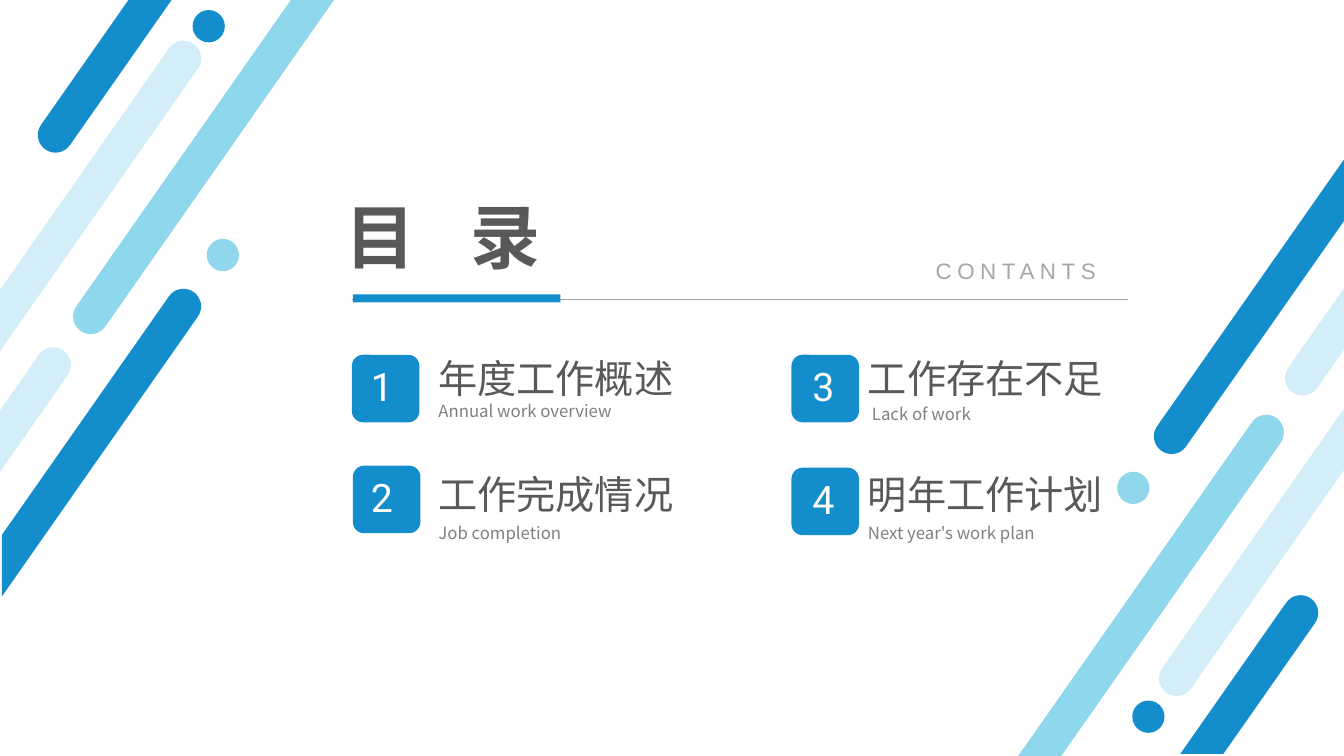
from math import cos, pi, radians, sin

from lxml.etree import SubElement
from pptx import Presentation
from pptx.dml.color import RGBColor
from pptx.enum.shapes import MSO_CONNECTOR, MSO_SHAPE
from pptx.enum.text import MSO_AUTO_SIZE, PP_ALIGN
from pptx.oxml.ns import qn
from pptx.util import Pt

PX = 9144
BLUE, SKY, SKY_CAP, PALE = "138DCC", "90D7EE", "8FD7ED", "D3EEF9"
DARK, MID, LIGHT, WHITE = "595959", "808080", "A6A6A6", "FFFFFF"
CJK = "Noto Sans CJK SC"
RADIUS, TILT, ARC_STEPS = 17.5, radians(35), 16

# Stripe: cap centre x and y, the axis and position of its straight cut, colour
STRIPES = [
    (182, 304, "x", 2, BLUE),
    (53, 362, "x", -4, PALE),
    (90, 314, "y", -3, SKY_CAP),
    (182, 58, "x", -3, PALE),
    (55, 134, "y", -4, BLUE),
    (1162, 433, "x", 1333, BLUE),
    (1292, 375, "x", 1338, PALE),
    (1256, 429, "y", 752, SKY_CAP),
    (1167, 673, "x", 1338, PALE),
    (1290, 608, "y", 748, BLUE),
]
DOTS = [(205, 237, SKY), (191, 10, BLUE), (1108, 468, SKY), (1123, 695, BLUE)]

# Entry: number, badge place, digit left, heading place, subtitle place, wording
ENTRIES = [
    ("1", (349, 352), 358, (425, 347), (425, 393), "年度工作概述", "Annual work overview"),
    ("2", (350, 462), 358, (425, 462), (425, 514), "工作完成情况", "Job completion"),
    ("3", (785, 352), 796, (851, 347), (855, 396), "工作存在不足", "Lack of work"),
    ("4", (785, 464), 796, (851, 462), (851, 514), "明年工作计划", "Next year's work plan"),
]


def color(value):
    """Turn a hex string into a colour."""
    return RGBColor.from_string(value)


def paint(shape, fill):
    """Give a shape a plain fill with no line or shadow."""
    shape.shadow.inherit = False
    shape.fill.solid()
    shape.fill.fore_color.rgb = color(fill)
    shape.line.fill.background()


def add_block(page, kind, left, top, width, height, fill):
    """Add a filled preset shape."""
    paint(page.shapes.add_shape(kind, left * PX, top * PX, width * PX, height * PX), fill)


def add_stripe(page, center_x, center_y, axis, cut, fill):
    """Add a slanted stripe with a round cap that runs to a straight cut."""
    step_x, step_y = sin(TILT), -cos(TILT)

    def reach(x, y):
        distance = (cut - x) / step_x if axis == "x" else (cut - y) / step_y
        return x + distance * step_x, y + distance * step_y

    upward = cut > center_x if axis == "x" else cut < center_y
    first_angle = TILT if upward else TILT + pi
    angles = [first_angle + pi * step / ARC_STEPS for step in range(ARC_STEPS + 1)]
    cap = [(center_x + RADIUS * cos(a), center_y + RADIUS * sin(a)) for a in angles]
    outline = [(x * PX, y * PX) for x, y in cap + [reach(*cap[-1]), reach(*cap[0])]]
    builder = page.shapes.build_freeform(*outline[0])
    builder.add_line_segments(outline[1:])
    paint(builder.convert_to_shape(), fill)


def add_text(page, text, left, top, width, height, size, ink, face=CJK,
             bold=False, spacing=0, align=PP_ALIGN.LEFT, after=0):
    """Add a text box holding one paragraph."""
    box = page.shapes.add_textbox(left * PX, top * PX, width * PX, height * PX)
    frame = box.text_frame
    frame.word_wrap = True
    frame.auto_size = MSO_AUTO_SIZE.SHAPE_TO_FIT_TEXT
    para = frame.paragraphs[0]
    para.alignment, para.space_after = align, Pt(after)
    span = para.add_run()
    span.text = text
    font = para.font
    font.size, font.bold, font.name = Pt(size), bold, face
    font.color.rgb = color(ink)
    properties = para._p.pPr.find(qn("a:defRPr"))
    SubElement(properties, qn("a:ea")).set("typeface", face)
    if spacing:
        span._r.get_or_add_rPr().set("spc", str(spacing * 100))


def add_rule(page, left, right, y):
    """Add the thin line under the title."""
    rule = page.shapes.add_connector(MSO_CONNECTOR.STRAIGHT, left * PX, y * PX, right * PX, y * PX)
    rule.line.color.rgb = color(LIGHT)
    rule.line.width = Pt(0.5)
    SubElement(rule._element.spPr, qn("a:effectLst"))


def add_entry(page, number, badge, digit_left, heading, subtitle, title, english):
    """Add a numbered badge with its heading and subtitle."""
    add_block(page, MSO_SHAPE.ROUNDED_RECTANGLE, *badge, 67, 67, BLUE)
    add_text(page, number, digit_left, badge[1] + 3, 71, 57, 28, WHITE, "Roboto")
    add_text(page, title, *heading, 326, 57, 28, DARK)
    add_text(page, english, *subtitle, 337, 30, 12, MID)


def main():
    """Build the contents slide."""
    deck = Presentation()
    deck.slide_width, deck.slide_height = 1333 * PX, 750 * PX
    page = deck.slides.add_slide(deck.slide_layouts[6])
    for stripe in STRIPES:
        add_stripe(page, *stripe)
    for left, top, fill in DOTS:
        add_block(page, MSO_SHAPE.OVAL, left, top, 32, 32, fill)
    add_rule(page, 349, 1119, 297)
    add_block(page, MSO_SHAPE.RECTANGLE, 350, 292, 206, 8, BLUE)
    add_text(page, "目 录", 333, 187, 961, 99, 50, DARK, bold=True, spacing=14, after=10)
    add_text(page, "CONTANTS", 883, 250, 249, 37, 16, LIGHT, "Arial",
             spacing=4, align=PP_ALIGN.CENTER)
    for entry in ENTRIES:
        add_entry(page, *entry)
    deck.save("out.pptx")


if __name__ == "__main__":
    main()
